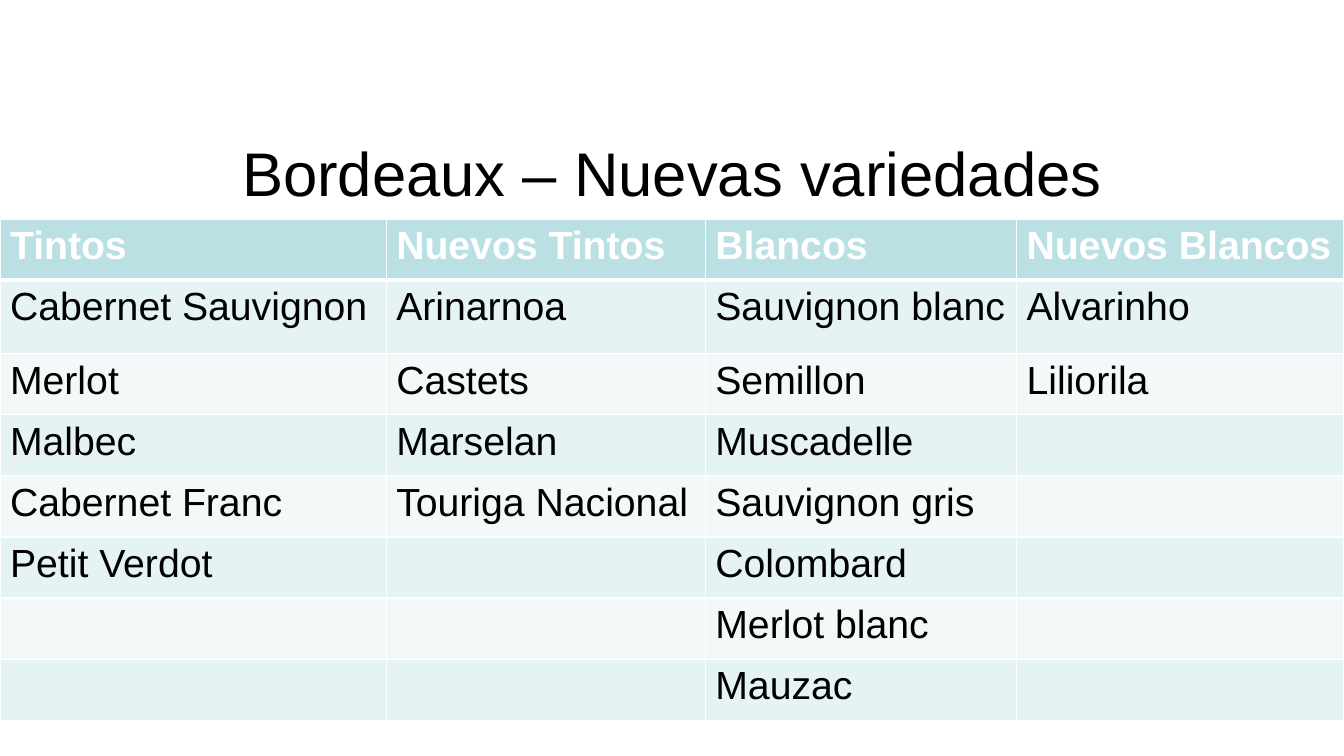
"""Build a slide with a table of the new Bordeaux grape varieties."""
from itertools import zip_longest

from lxml.etree import SubElement
from pptx import Presentation
from pptx.dml.color import RGBColor
from pptx.enum.text import MSO_ANCHOR, PP_ALIGN
from pptx.oxml.ns import qn
from pptx.util import Cm, Pt

VARIETIES = {
    "Tintos": ["Cabernet Sauvignon", "Merlot", "Malbec", "Cabernet Franc", "Petit Verdot"],
    "Nuevos Tintos": ["Arinarnoa", "Castets", "Marselan", "Touriga Nacional"],
    "Blancos": ["Sauvignon blanc", "Semillon", "Muscadelle", "Sauvignon gris",
                "Colombard", "Merlot blanc", "Mauzac"],
    "Nuevos Blancos": ["Alvarinho", "Liliorila"],
}
COLUMN_WIDTHS = [9.73, 8.04, 7.84, 8.25]
ROW_HEIGHT, FIRST_BODY_ROW_HEIGHT = 1.54, 1.85
HEADER_FILL, BODY_FILLS = "BBE0E3", ["F3F9F9", "E6F3F4"]
THIN_BORDER, THICK_BORDER = Pt(0.96), Pt(3)


def write(paragraph, text, color, **font_format):
    run = paragraph.add_run()
    run.text = text
    run.font.color.rgb = RGBColor.from_string(color)
    for name, value in {"name": "Arial", **font_format}.items():
        setattr(run.font, name, value)


def add_border(cell, side, width, color):
    line = SubElement(cell._tc.get_or_add_tcPr(), qn(f"a:ln{side}"), w=str(int(width)))
    fill = SubElement(line, qn("a:solidFill"))
    SubElement(fill, qn("a:srgbClr"), val=color)


presentation = Presentation()
presentation.slide_width = Cm(33.86)
presentation.slide_height = Cm(19.05)
slide = presentation.slides.add_slide(presentation.slide_layouts[6])

title = slide.shapes.add_textbox(Cm(1.7), Cm(2.75), Cm(30.48), Cm(3.18))
title.text_frame.word_wrap = True
title.text_frame.vertical_anchor = MSO_ANCHOR.MIDDLE
title_paragraph = title.text_frame.paragraphs[0]
title_paragraph.alignment = PP_ALIGN.CENTER
write(title_paragraph, "Bordeaux – Nuevas variedades", "000000", size=Pt(44))

rows = [list(VARIETIES), *zip_longest(*VARIETIES.values(), fillvalue="")]
table = slide.shapes.add_table(
    len(rows), len(COLUMN_WIDTHS), Cm(0), Cm(5.52), Cm(sum(COLUMN_WIDTHS)),
    Cm(ROW_HEIGHT * (len(rows) - 1) + FIRST_BODY_ROW_HEIGHT)).table
for column, width in zip(table.columns, COLUMN_WIDTHS):
    column.width = Cm(width)

for row_index, row in enumerate(rows):
    is_header = row_index == 0
    table.rows[row_index].height = Cm(FIRST_BODY_ROW_HEIGHT if row_index == 1 else ROW_HEIGHT)
    fill_color = HEADER_FILL if is_header else BODY_FILLS[row_index % 2]
    text_color = "FFFFFF" if is_header else "000000"
    widths = {"L": THIN_BORDER, "R": THIN_BORDER,
              "T": THICK_BORDER if row_index == 1 else THIN_BORDER,
              "B": THICK_BORDER if is_header else THIN_BORDER}
    for column_index, text in enumerate(row):
        cell = table.cell(row_index, column_index)
        cell.margin_right = Cm(0.2)
        for side, width in widths.items():
            add_border(cell, side, width, "FFFFFF")
        cell.fill.solid()
        cell.fill.fore_color.rgb = RGBColor.from_string(fill_color)
        if text:
            write(cell.text_frame.paragraphs[0], text, text_color, size=Pt(28), bold=is_header)

presentation.save("out.pptx")
